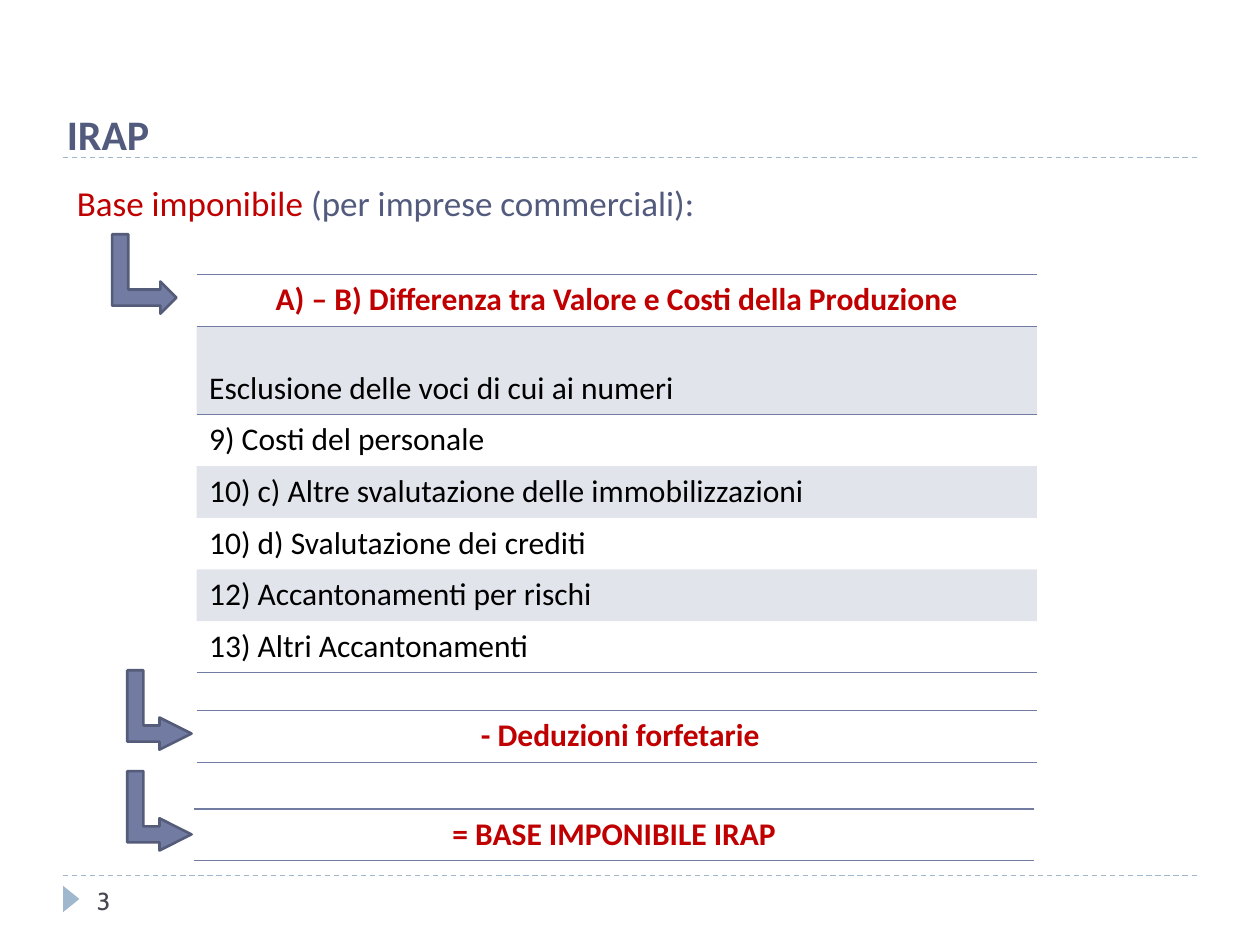
"""Build the IRAP tax base slide."""
from lxml.etree import SubElement
from pptx import Presentation
from pptx.dml.color import RGBColor
from pptx.enum.dml import MSO_LINE
from pptx.enum.shapes import MSO_CONNECTOR, MSO_SHAPE
from pptx.enum.text import MSO_ANCHOR, PP_ALIGN
from pptx.oxml.ns import qn
from pptx.util import Inches, Pt

RED, SLATE, BLUE, PALE = "C00000", "525B7E", "727CA3", "9FB8CD"
PLAIN = "{2D5ABB26-0587-4C30-8999-92F81FD0307C}"


def tint(text):
    return RGBColor.from_string(text)


def write(para, text, size, color, **extra):
    run = para.add_run()
    run.text = text
    look = {"name": "Calibri", "size": Pt(size), "bold": False} | extra
    for key, value in look.items():
        setattr(run.font, key, value)
    run.font.color.rgb = tint(color)


deck = Presentation()
deck.slide_width, deck.slide_height = Inches(10), Inches(7.5)
slide = deck.slides.add_slide(deck.slide_layouts[1])
shapes = slide.shapes

for y in (6.95, 1.25):
    rule = shapes.add_connector(MSO_CONNECTOR.STRAIGHT, Inches(0.5), Inches(y), Inches(9.5), Inches(y))
    rule.line.color.rgb = tint(PALE)
    rule.line.width = Pt(0.75)
    rule.line.dash_style = MSO_LINE.DASH
    SubElement(rule._element.spPr, qn("a:effectLst"))

mark = shapes.add_shape(MSO_SHAPE.ISOSCELES_TRIANGLE, Inches(0.46), Inches(7.07), Inches(0.21), Inches(0.13))
mark.rotation = 90
mark.shadow.inherit = False
mark.fill.solid()
mark.fill.fore_color.rgb = tint(PALE)
mark.line.fill.background()

page = shapes.add_textbox(Inches(0.67), Inches(6.95), Inches(2.17), Inches(0.4))
page.text_frame.vertical_anchor = MSO_ANCHOR.MIDDLE
write(page.text_frame.paragraphs[0], "3", 14, "464653", name="Cabin")

title, body = shapes.title, slide.placeholders[1]
for holder, box, anchor in (
    (title, (0.43, 0.81, 8.91, 0.5), MSO_ANCHOR.BOTTOM),
    (body, (0.51, 1.39, 8.76, 5.59), MSO_ANCHOR.TOP),
):
    holder.left, holder.top, holder.width, holder.height = map(Inches, box)
    holder.text_frame.vertical_anchor = anchor

head = title.text_frame.paragraphs[0]
head.alignment = PP_ALIGN.LEFT
write(head, "IRAP", 24, SLATE, bold=True)

lead = body.text_frame.paragraphs[0]
lead.alignment = PP_ALIGN.JUSTIFY
lead.space_before = Pt(0)
props = lead._p.get_or_add_pPr()
props.set("marL", "0")
props.set("indent", "0")
SubElement(props, qn("a:buNone"))
write(lead, "Base imponibile ", 20, RED)
write(lead, "(per imprese commerciali):", 20, SLATE)

items = [
    "A) – B) Differenza tra Valore e Costi della Produzione",
    "Esclusione delle voci di cui ai numeri",
    "9) Costi del personale",
    "10) c) Altre svalutazione delle immobilizzazioni",
    "10) d) Svalutazione dei crediti",
    "12) Accantonamenti per rischi",
    "13) Altri Accantonamenti",
]
blocks = [
    (1.56, 2.18, items, 0.83, 1.92, 0.25),
    (1.56, 5.64, [" - Deduzioni forfetarie"], 0.95, 5.38, 0.5),
    (1.54, 6.42, ["= BASE IMPONIBILE IRAP"], 0.95, 6.18, 0.5),
]
for left, top, lines, x, y, tip in blocks:
    frame = shapes.add_table(len(lines), 1, Inches(left), Inches(top), Inches(6.67), Inches(0.41 * len(lines)))
    table = frame.table
    table.first_row = table.horz_banding = False
    next(table._tbl.iter(qn("a:tableStyleId"))).text = PLAIN
    for i, text in enumerate(lines):
        table.rows[i].height = Inches(0.7 if i == 1 else 0.41)
        cell = table.cell(i, 0)
        cell.vertical_anchor = MSO_ANCHOR.BOTTOM if i == 1 else MSO_ANCHOR.TOP
        para = cell.text_frame.paragraphs[0]
        para.alignment = PP_ALIGN.LEFT if i else PP_ALIGN.CENTER
        write(para, text, 18, "000000" if i else RED, bold=i == 0)
        edges = (["lnT"] if i < 2 else []) + (["lnB"] if i in (0, len(lines) - 1) else [])
        for edge in edges:
            line = SubElement(cell._tc.get_or_add_tcPr(), qn(f"a:{edge}"), w=str(Pt(1)))
            SubElement(SubElement(line, qn("a:solidFill")), qn("a:srgbClr"), val=BLUE)
        if i % 2:
            cell.fill.solid()
            cell.fill.fore_color.rgb = tint(BLUE)
            shade = cell._tc.tcPr.find(qn("a:solidFill"))
            SubElement(shade[0], qn("a:alpha"), val="20000")
        else:
            cell.fill.background()
        fill = cell._tc.tcPr.find(qn("a:solidFill" if i % 2 else "a:noFill"))
        cell._tc.tcPr.append(fill)

    arrow = shapes.add_shape(MSO_SHAPE.BENT_UP_ARROW, Inches(x), Inches(y), Inches(0.63), Inches(0.51))
    arrow.rotation = 90
    arrow.adjustments[2] = tip
    arrow.shadow.inherit = False
    arrow.fill.solid()
    arrow.fill.fore_color.rgb = tint(BLUE)
    arrow.line.color.rgb = tint("545C79")
    arrow.line.width = Pt(1.5)

deck.save("out.pptx")
